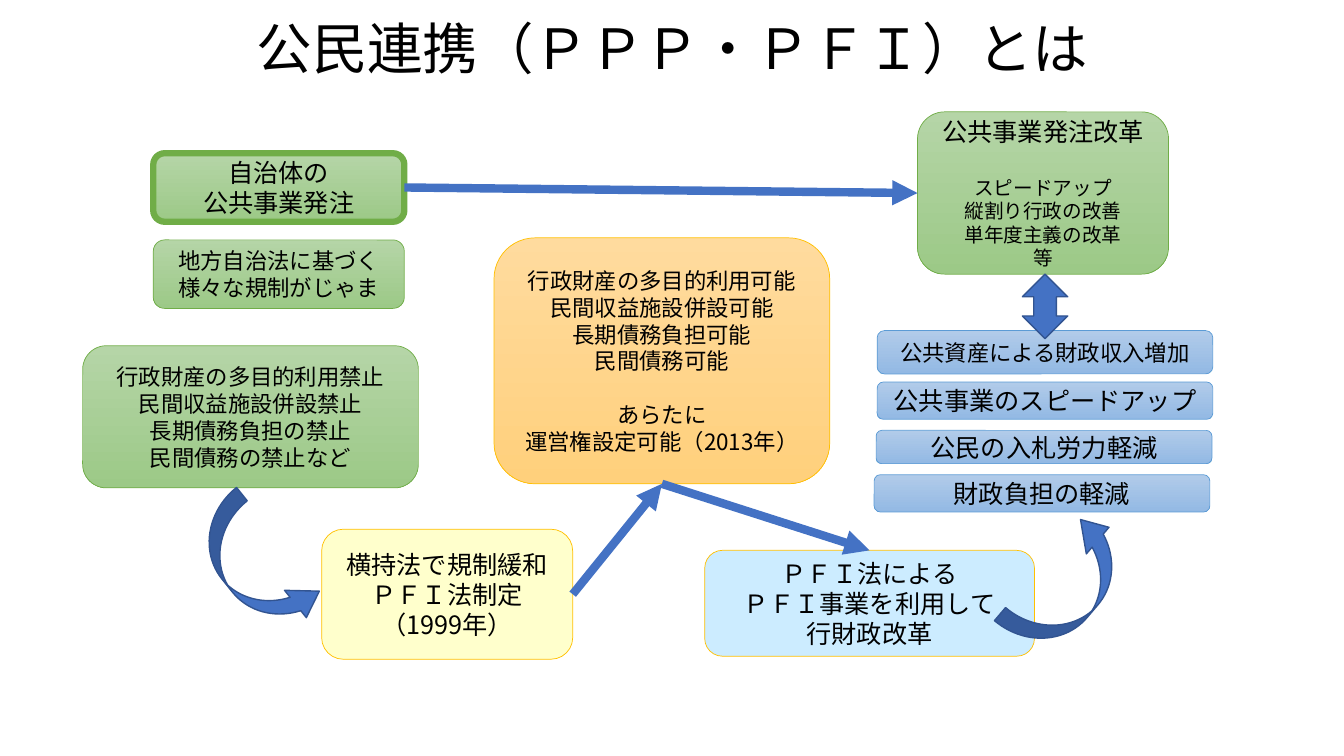
import pptx
import pptx.util
import pptx.dml.color
import pptx.enum.shapes
import pptx.enum.text
import pptx.oxml.ns
import lxml.etree

PX = 9144  # 100 px to the inch
FONT = "Noto Sans CJK JP"
COLORS = {
    "text": "000000",
    "arrow": "4472C4",
    "arrow_edge": "325491",
    "yellow": "FFFFCC",
    "sky": "CCECFF",
    "green_top": "B5D5A7",
    "green_bottom": "9CC987",
    "green_edge": "70AD47",
    "orange_top": "FFDB9E",
    "orange_bottom": "FFD07C",
    "gold_edge": "FFC000",
    "blue_top": "B1CBE9",
    "blue_bottom": "93B9E4",
    "blue_edge": "5B9BD5",
}
# Each style: fill colours (one is solid, two are a gradient), then the edge
STYLES = {
    "green": (["green_top", "green_bottom"], "green_edge"),
    "orange": (["orange_top", "orange_bottom"], "gold_edge"),
    "blue": (["blue_top", "blue_bottom"], "blue_edge"),
    "yellow": (["yellow"], "gold_edge"),
    "sky": (["sky"], "gold_edge"),
    "arrow": (["arrow"], "arrow_edge"),
}
SHAPES = pptx.enum.shapes.MSO_SHAPE


def color(name):
    return pptx.dml.color.RGBColor.from_string(COLORS[name])


def add_element(parent, tag, **attributes):
    element = lxml.etree.SubElement(parent, pptx.oxml.ns.qn(tag))
    for name, value in attributes.items():
        element.set(name, value)


def write_text(shape, text, size=18, gap_before=0, line_spacing=None):
    """Add one centred paragraph per line of text, after any already there."""
    frame = shape.text_frame
    frame.word_wrap = True
    frame.vertical_anchor = pptx.enum.text.MSO_ANCHOR.MIDDLE
    for index, line in enumerate(text.split("\n")):
        paragraph = frame.add_paragraph() if frame.text else frame.paragraphs[0]
        paragraph.alignment = pptx.enum.text.PP_ALIGN.CENTER
        if line_spacing:
            paragraph.line_spacing = line_spacing
        if gap_before and index == 0:
            paragraph.space_before = pptx.util.Pt(gap_before)
        run = paragraph.add_run()
        run.text = line
        run.font.size = pptx.util.Pt(size)
        run.font.color.rgb = color("text")
        run.font.name = FONT
        add_element(run.font._element, "a:ea", typeface=FONT)


def add_shape(slide, kind, box, style, edge_width):
    shape = slide.shapes.add_shape(kind, *(value * PX for value in box))
    shape.shadow.inherit = False
    fills, edge = STYLES[style]
    if len(fills) == 1:
        shape.fill.solid()
        shape.fill.fore_color.rgb = color(fills[0])
    else:
        shape.fill.gradient()
        shape.fill.gradient_angle = 270
        for stop, name in zip(shape.fill.gradient_stops, fills):
            stop.color.rgb = color(name)
    shape.line.color.rgb = color(edge)
    shape.line.width = pptx.util.Pt(edge_width)
    return shape


def add_box(slide, box, style, text, size=18, edge_width=0.5):
    shape = add_shape(slide, SHAPES.ROUNDED_RECTANGLE, box, style, edge_width)
    write_text(shape, text, size=size)
    return shape


def add_block_arrow(slide, kind, box, adjustments, rotation=0):
    shape = add_shape(slide, kind, box, "arrow", 1)
    shape.rotation = rotation
    for index, value in enumerate(adjustments):
        shape.adjustments[index] = value


def add_curved_arrow(slide, left, top, rotation):
    add_block_arrow(slide, SHAPES.CURVED_UP_ARROW, (left, top, 149, 68),
                    (0.25, 0.51, 0.39), rotation)


def connect(slide, start, start_side, end, end_side):
    """Join two boxes with an arrow between their named sides."""
    sides = ["top", "left", "bottom", "right"]
    connector = slide.shapes.add_connector(
        pptx.enum.shapes.MSO_CONNECTOR.STRAIGHT, 0, 0, 0, 0)
    connector.begin_connect(start, sides.index(start_side))
    connector.end_connect(end, sides.index(end_side))
    connector.line.color.rgb = color("arrow")
    connector.line.width = pptx.util.Pt(6)
    add_element(connector.line._get_or_add_ln(), "a:tailEnd", type="triangle")
    add_element(connector._element.spPr, "a:effectLst")


def add_title(slide, box, text):
    title = slide.shapes.title
    title.left, title.top, title.width, title.height = (
        value * PX for value in box)
    write_text(title, text, size=39.6, line_spacing=0.9)


def main():
    presentation = pptx.Presentation()
    presentation.slide_width = 1333 * PX
    presentation.slide_height = 750 * PX
    slide = presentation.slides.add_slide(presentation.slide_layouts[5])

    add_title(slide, (231, 21, 872, 60), "公民連携（ＰＰＰ・ＰＦＩ）とは")

    ordering = add_box(slide, (152, 152, 249, 68), "green",
                       "自治体の\n公共事業発注", edge_width=4.5)
    add_box(slide, (152, 238, 249, 68), "green",
            "地方自治法に基づく\n様々な規制がじゃま", size=16)
    add_box(slide, (82, 343, 333, 141), "green",
            "行政財産の多目的利用禁止\n民間収益施設併設禁止\n"
            "長期債務負担の禁止\n民間債務の禁止など", size=16)
    law = add_box(slide, (319, 525, 249, 129), "yellow",
                  "横持法で規制緩和\nＰＦＩ法制定\n（1999年）")
    permitted = add_box(slide, (490, 236, 333, 244), "orange",
                        "行政財産の多目的利用可能\n民間収益施設併設可能\n"
                        "長期債務負担可能\n民間債務可能", size=16)
    write_text(permitted, "あらたに\n運営権設定可能（2013年）",
               size=16, gap_before=19)
    project = add_box(slide, (699, 546, 327, 105), "sky",
                      "ＰＦＩ法による\nＰＦＩ事業を利用して\n行財政改革")

    benefits = [
        (867, 471, 37, "財政負担の軽減", 18),
        (869, 427, 33, "公民の入札労力軽減", 18),
        (870, 379, 37, "公共事業のスピードアップ", 18),
        (870, 328, 43, "公共資産による財政収入増加", 16),
    ]
    for left, top, height, text, size in benefits:
        add_box(slide, (left, top, 333, height), "blue", text, size=size)

    add_curved_arrow(slide, 180, 529, 51.4)
    reform = add_box(slide, (910, 111, 249, 161), "green", "公共事業発注改革")
    write_text(reform, "スピードアップ\n縦割り行政の改善\n単年度主義の改革\n等",
               size=14, gap_before=21)
    connect(slide, law, "right", permitted, "bottom")
    connect(slide, permitted, "bottom", project, "top")
    add_curved_arrow(slide, 986, 547, 310.4)
    connect(slide, ordering, "right", reform, "left")
    add_block_arrow(slide, SHAPES.UP_DOWN_ARROW, (1014, 272, 45, 64),
                    (0.3, 0.5))

    presentation.save("out.pptx")


if __name__ == "__main__":
    main()
